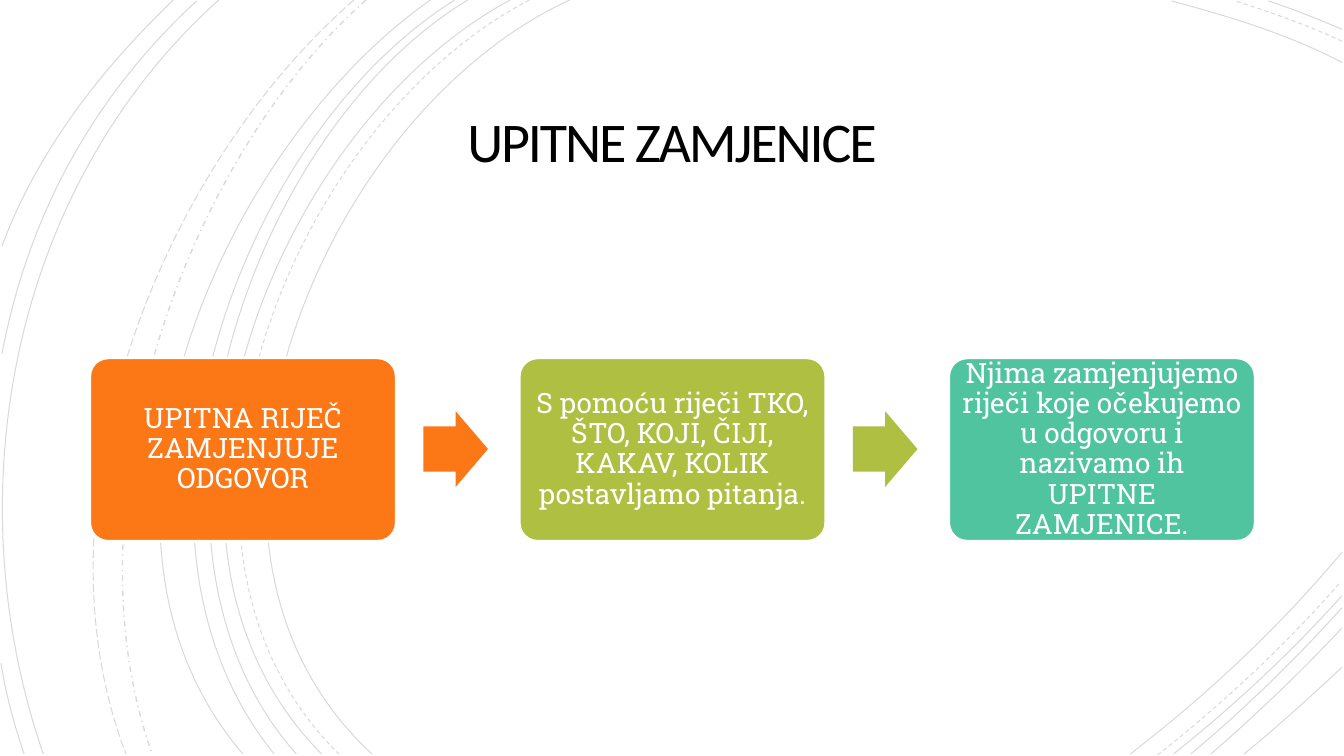
from lxml import etree
from pptx import Presentation
from pptx.dml.color import RGBColor
from pptx.enum.dml import MSO_LINE
from pptx.enum.shapes import MSO_SHAPE
from pptx.enum.text import MSO_ANCHOR, PP_ALIGN
from pptx.oxml.ns import qn
from pptx.util import Inches, Pt

SOLID, DASH = MSO_LINE.SOLID, MSO_LINE.DASH
LONG_DASH, DASH_DOT = MSO_LINE.LONG_DASH, MSO_LINE.DASH_DOT
ROUNDED_BOX, RIGHT_ARROW = MSO_SHAPE.ROUNDED_RECTANGLE, MSO_SHAPE.RIGHT_ARROW
MIDDLE, CENTER = MSO_ANCHOR.MIDDLE, PP_ALIGN.CENTER

BLACK = RGBColor(0x00, 0x00, 0x00)
WHITE = RGBColor(0xFF, 0xFF, 0xFF)
ORANGE = RGBColor(0xFC, 0x77, 0x15)
GREEN = RGBColor(0xAF, 0xBF, 0x41)
TEAL = RGBColor(0x50, 0xC4, 0x9F)

TITLE_STYLE = {"name": "Calibri", "size": Pt(40)}
STEP_STYLE = {"name": "Roboto Slab", "size": Pt(20)}

ARCS = [
    (5.65, 0, 3.15, 1.15, 1.43, 5.4, 3.69, 7.48, SOLID),
    (13.31, 0.62, 12.78, 0.34, 12.18, 0.16, 11.62, 0.01, SOLID),
    (11.21, 7.48, 11.97, 6.9, 12.69, 6.22, 13.31, 5.48, SOLID),
    (5.25, 0, 2.85, 1.25, 1.23, 5.37, 3.36, 7.48, DASH),
    (13.31, 0.41, 12.97, 0.25, 12.6, 0.12, 12.25, 0.01, DASH),
    (11.48, 7.49, 12.13, 6.98, 12.75, 6.4, 13.3, 5.77, DASH),
    (5.06, 0, 2.7, 1.27, 1.1, 5.37, 3.19, 7.48, SOLID),
    (13.31, 0.29, 13.07, 0.19, 12.83, 0.09, 12.58, 0.01, SOLID),
    (11.64, 7.48, 12.23, 7.01, 12.8, 6.48, 13.31, 5.91, SOLID),
    (4.64, 0, 2.44, 1.33, 1.1, 5.41, 2.94, 7.48, SOLID),
    (11.81, 7.48, 12.34, 7.04, 12.84, 6.55, 13.31, 6.03, SOLID),
    (4.51, 0, 2.31, 1.38, 0.97, 5.33, 2.72, 7.48, SOLID),
    (12.01, 7.48, 12.46, 7.09, 12.9, 6.67, 13.31, 6.23, SOLID),
    (4.27, 0, 2.17, 1.47, 0.53, 5.29, 2.41, 7.48, SOLID),
    (12.34, 7.48, 12.67, 7.21, 12.99, 6.92, 13.31, 6.62, SOLID),
    (3.63, 0, 1.76, 1.66, 0.65, 5.09, 1.51, 7.48, DASH_DOT),
    (3.51, 0, 1.57, 1.69, 0.29, 4.99, 1.25, 7.48, LONG_DASH),
    (2.17, 0, 0.11, 1.85, -0.46, 4.9, 0.43, 7.48, SOLID),
    (1.95, 0.01, 0.92, 0.96, 0.28, 2.14, 0.02, 3.51, SOLID),
    (0.01, 6.58, 0.06, 6.89, 0.14, 7.19, 0.24, 7.48, SOLID),
    (1.72, 0, 1, 0.69, 0.37, 1.5, 0.02, 2.44, SOLID),
]

STEPS = [
    ("UPITNA RIJEČ ZAMJENJUJE ODGOVOR", ORANGE),
    ("S pomoću riječi TKO, ŠTO, KOJI, ČIJI, KAKAV, KOLIK postavljamo pitanja.", GREEN),
    ("Njima zamjenjujemo riječi koje očekujemo u odgovoru i nazivamo ih "
     "UPITNE ZAMJENICE.", TEAL),
]
STEP_LEFT, STEP_PITCH = 0.89, 4.26
ARROW_OFFSET = 3.31


class SlideBuilder:
    arc_opacity = 15

    def __init__(self, slide):
        self.slide = slide
        self.shapes = slide.shapes

    def add_text(self, shape, text, style, color, margin, line_spacing):
        frame = shape.text_frame
        frame_format = {"word_wrap": True, "vertical_anchor": MIDDLE}
        for side in ("left", "top", "right", "bottom"):
            frame_format[f"margin_{side}"] = Inches(margin)
        for name, value in frame_format.items():
            setattr(frame, name, value)
        paragraph = frame.paragraphs[0]
        paragraph.alignment = CENTER
        paragraph.line_spacing = line_spacing
        run = paragraph.add_run()
        run.text = text
        for name, value in style.items():
            setattr(run.font, name, value)
        run.font.color.rgb = color
        return run

    def title(self, text, *box):
        shape = self.shapes.add_textbox(*map(Inches, box))
        run = self.add_text(shape, text, TITLE_STYLE, BLACK, 0.25, 0.85)
        run.font._element.set("spc", "-150")

    def arc(self, *coordinates, dash):
        lengths = [Inches(value) for value in coordinates]
        start, *others = zip(lengths[::2], lengths[1::2])
        builder = self.shapes.build_freeform(*start)
        builder.add_line_segments(others, close=False)
        shape = builder.convert_to_shape()
        segments = list(shape.element.iter(qn("a:lnTo")))
        curve = etree.SubElement(segments[0].getparent(), qn("a:cubicBezTo"))
        for segment in segments:
            curve.append(segment[0])
            segment.getparent().remove(segment)
        shape.shadow.inherit = False
        shape.fill.background()
        shape.line.color.rgb = BLACK
        shape.line.width = Pt(1 if dash == DASH_DOT else 0.75)
        shape.line.dash_style = dash
        color = next(shape.element.spPr.iter(qn("a:srgbClr")))
        etree.SubElement(color, qn("a:alpha"), val=str(self.arc_opacity * 1000))

    def block(self, kind, box, color, adjustments):
        shape = self.shapes.add_shape(kind, *map(Inches, box))
        shape.shadow.inherit = False
        shape.fill.solid()
        shape.fill.fore_color.rgb = color
        shape.line.fill.background()
        for index, value in enumerate(adjustments):
            shape.adjustments[index] = value
        return shape

    def step(self, left, text, color):
        shape = self.block(ROUNDED_BOX, (left, 3.55, 3.04, 1.82), color, [0.1])
        shape.line.color.rgb = WHITE
        shape.line.width = Pt(2)
        self.add_text(shape, text, STEP_STYLE, WHITE, 0.08, 0.9)

    def arrow(self, left, color):
        self.block(RIGHT_ARROW, (left, 4.08, 0.64, 0.75), color, [0.6, 0.5])


def main():
    presentation = Presentation()
    presentation.slide_width = Inches(13.33)
    presentation.slide_height = Inches(7.5)
    slide = presentation.slides.add_slide(presentation.slide_layouts[6])
    slide.background.fill.solid()
    slide.background.fill.fore_color.rgb = WHITE
    builder = SlideBuilder(slide)
    for *coordinates, dash in ARCS:
        builder.arc(*coordinates, dash=dash)
    builder.title("UPITNE ZAMJENICE", 1.92, 0.87, 9.49, 1.15)
    for index, (text, color) in enumerate(STEPS):
        left = STEP_LEFT + index * STEP_PITCH
        builder.step(left, text, color)
        if index < len(STEPS) - 1:
            builder.arrow(left + ARROW_OFFSET, color)
    presentation.save("out.pptx")


if __name__ == "__main__":
    main()
